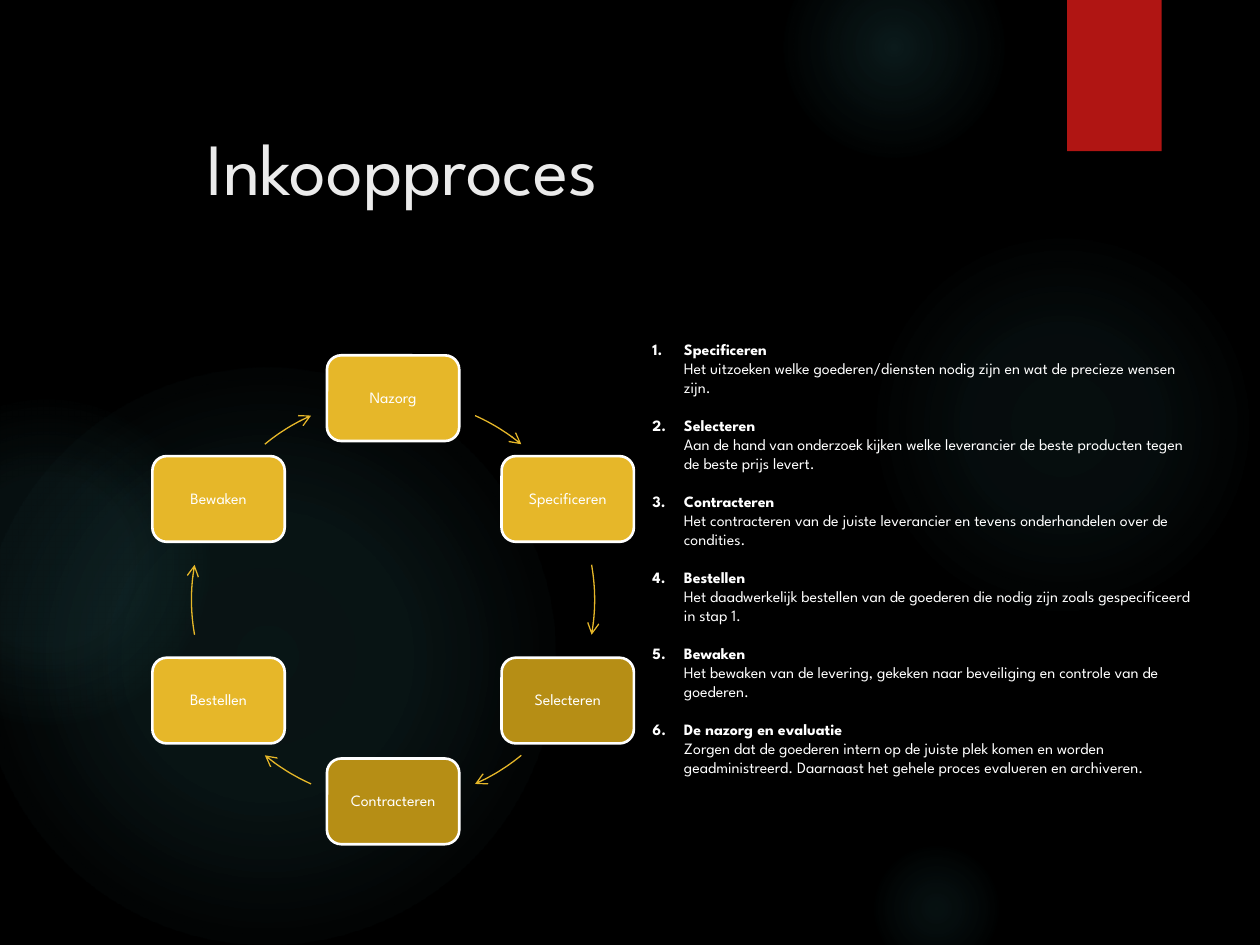
from math import cos, radians, sin
from typing import NamedTuple

from lxml import etree
from pptx import Presentation
from pptx import util as u
from pptx.dml.color import RGBColor
from pptx.enum import shapes, text
from pptx.oxml import parse_xml
from pptx.oxml.ns import nsdecls, qn

FONT = "League Spartan"
BLACK = RGBColor(0x00, 0x00, 0x00)
WHITE = RGBColor(0xFF, 0xFF, 0xFF)
OFF_WHITE = RGBColor(0xEB, 0xEB, 0xEB)
RED = RGBColor(0xB0, 0x15, 0x13)
GOLD = RGBColor(0xE6, 0xB7, 0x29)
DARK_GOLD = RGBColor(0xB6, 0x8E, 0x15)
TEAL = RGBColor(0x50, 0xB9, 0xC1)

# Cycle geometry, in inches and in degrees clockwise from the top
CENTER_X, CENTER_Y, RADIUS = 3.12, 4.76, 1.6
NODE_WIDTH, NODE_HEIGHT = 1.05, 0.68
ARC_SEGMENTS = 12


class Glow(NamedTuple):
    left: float
    top: float
    size: float
    stops: tuple[tuple[int, int], ...]  # position and opacity, in percent


class Node(NamedTuple):
    label: str
    color: RGBColor
    arc_start: float
    arc_end: float


class Step(NamedTuple):
    name: str
    description: str


GLOWS = [
    Glow(6.89, 1.83, 3.08, ((0, 7), (36, 6), (69, 0))),
    Glow(6.22, -0.5, 1.75, ((0, 14), (36, 7), (73, 0))),
    Glow(6.89, 6.67, 1.08, ((0, 9), (36, 5), (66, 0))),
    Glow(-0.17, 2.92, 4.58, ((0, 11), (36, 10), (75, 0))),
    Glow(-0.92, 3.17, 2.58, ((0, 8), (36, 8), (72, 0))),
]

NODES = [
    Node("Nazorg", GOLD, 24, 39.5),
    Node("Specificeren", GOLD, 80, 100),
    Node("Selecteren", DARK_GOLD, 140.5, 156),
    Node("Contracteren", DARK_GOLD, 204, 219.5),
    Node("Bestellen", GOLD, 260, 280),
    Node("Bewaken", GOLD, 320.5, 336),
]

STEPS = [
    Step("Specificeren", "Het uitzoeken welke goederen/diensten nodig zijn en wat de "
         "precieze wensen zijn."),
    Step("Selecteren", "Aan de hand van onderzoek kijken welke leverancier de beste "
         "producten tegen de beste prijs levert."),
    Step("Contracteren", "Het contracteren van de juiste leverancier en tevens "
         "onderhandelen over de condities."),
    Step("Bestellen", "Het daadwerkelijk bestellen van de goederen die nodig zijn zoals "
         "gespecificeerd in stap 1."),
    Step("Bewaken", "Het bewaken van de levering, gekeken naar beveiliging en controle "
         "van de goederen."),
    Step("De nazorg en evaluatie", "Zorgen dat de goederen intern op de juiste plek komen "
         "en worden geadministreerd. Daarnaast het gehele proces evalueren en archiveren."),
]


def on_circle(angle: float) -> tuple[float, float]:
    turn = radians(angle)
    return CENTER_X + RADIUS * sin(turn), CENTER_Y - RADIUS * cos(turn)


def style_text(para, size: float, color: RGBColor) -> None:
    para.font.name = FONT
    para.font.size = u.Pt(size)
    para.font.color.rgb = color


def add_plain_shape(page, kind, left: float, top: float, width: float, height: float):
    shape = page.shapes.add_shape(
        kind, u.Inches(left), u.Inches(top), u.Inches(width), u.Inches(height))
    shape.shadow.inherit = False
    shape.line.fill.background()
    return shape


def add_text_box(page, left: float, top: float, width: float, height: float):
    box = page.shapes.add_textbox(
        u.Inches(left), u.Inches(top), u.Inches(width), u.Inches(height))
    box.text_frame.word_wrap = True
    return box.text_frame


def add_glow(page, glow: Glow) -> None:
    shape = add_plain_shape(page, shapes.MSO_SHAPE.OVAL,
                            glow.left, glow.top, glow.size, glow.size)
    stops = "".join(
        f'<a:gs pos="{position * 1000}"><a:srgbClr val="{TEAL}">'
        f'<a:alpha val="{opacity * 1000}"/></a:srgbClr></a:gs>'
        for position, opacity in glow.stops)
    gradient = parse_xml(
        f'<a:gradFill {nsdecls("a")} rotWithShape="1"><a:gsLst>{stops}</a:gsLst>'
        '<a:path path="circle"><a:fillToRect l="50000" t="50000" r="50000" b="50000"/>'
        '</a:path></a:gradFill>')
    shape.element.spPr.find(qn("a:prstGeom")).addnext(gradient)


def add_node(page, node: Node, angle: float) -> None:
    x, y = on_circle(angle)
    shape = add_plain_shape(page, shapes.MSO_SHAPE.ROUNDED_RECTANGLE, x - NODE_WIDTH / 2,
                            y - NODE_HEIGHT / 2, NODE_WIDTH, NODE_HEIGHT)
    shape.fill.solid()
    shape.fill.fore_color.rgb = node.color
    shape.line.color.rgb = WHITE
    shape.line.width = u.Pt(1.5)
    frame = shape.text_frame
    frame.margin_left = frame.margin_right = u.Inches(0.04)
    frame.margin_top = frame.margin_bottom = u.Inches(0.04)
    frame.vertical_anchor = text.MSO_ANCHOR.MIDDLE
    para = frame.paragraphs[0]
    para.text = node.label
    para.alignment = text.PP_ALIGN.CENTER
    para.line_spacing = 0.9
    style_text(para, 9, WHITE)


def add_arc_arrow(page, node: Node) -> None:
    sweep = node.arc_end - node.arc_start
    points = [
        tuple(u.Inches(value) for value in on_circle(node.arc_start + sweep * i / ARC_SEGMENTS))
        for i in range(ARC_SEGMENTS + 1)]
    builder = page.shapes.build_freeform(*points[0])
    builder.add_line_segments(points[1:], close=False)
    arrow = builder.convert_to_shape()
    arrow.shadow.inherit = False
    arrow.fill.background()
    arrow.line.color.rgb = GOLD
    arrow.line.width = u.Pt(0.75)
    etree.SubElement(arrow.line._get_or_add_ln(), qn("a:tailEnd"), type="arrow")


def add_step(para, step: Step) -> None:
    properties = para._p.get_or_add_pPr()
    properties.set("marL", str(u.Inches(0.25)))
    properties.set("indent", str(u.Inches(-0.25)))
    etree.SubElement(properties, qn("a:buFont"), typeface="+mj-lt")
    etree.SubElement(properties, qn("a:buAutoNum"), type="arabicPeriod")
    style_text(para, 9, WHITE)
    heading = para.add_run()
    heading.text = step.name
    heading.font.bold = True
    para.add_line_break()
    description = para.add_run()
    description.text = step.description
    description.font.bold = False


def main() -> None:
    deck = Presentation()
    deck.slide_width, deck.slide_height = u.Inches(10), u.Inches(7.5)
    page = deck.slides.add_slide(deck.slide_layouts[6])

    # Backdrop
    page.background.fill.solid()
    page.background.fill.fore_color.rgb = BLACK
    for glow in GLOWS:
        add_glow(page, glow)
    ribbon = add_plain_shape(page, shapes.MSO_SHAPE.RECTANGLE, 8.47, 0, 0.75, 1.2)
    ribbon.fill.solid()
    ribbon.fill.fore_color.rgb = RED

    # Title
    title = add_text_box(page, 1.54, 0.92, 7.68, 1.25).paragraphs[0]
    title.text = "Inkoopproces"
    style_text(title, 42, OFF_WHITE)

    # Purchasing cycle
    for index, node in enumerate(NODES):
        add_node(page, node, index * 360 / len(NODES))
        add_arc_arrow(page, node)

    # Numbered explanation
    frame = add_text_box(page, 5.08, 2.65, 4.49, 3.74)
    for index, step in enumerate(STEPS):
        para = frame.add_paragraph() if index else frame.paragraphs[0]
        if index:
            para.space_before = u.Pt(10.9)
        add_step(para, step)

    deck.save("out.pptx")


if __name__ == "__main__":
    main()
